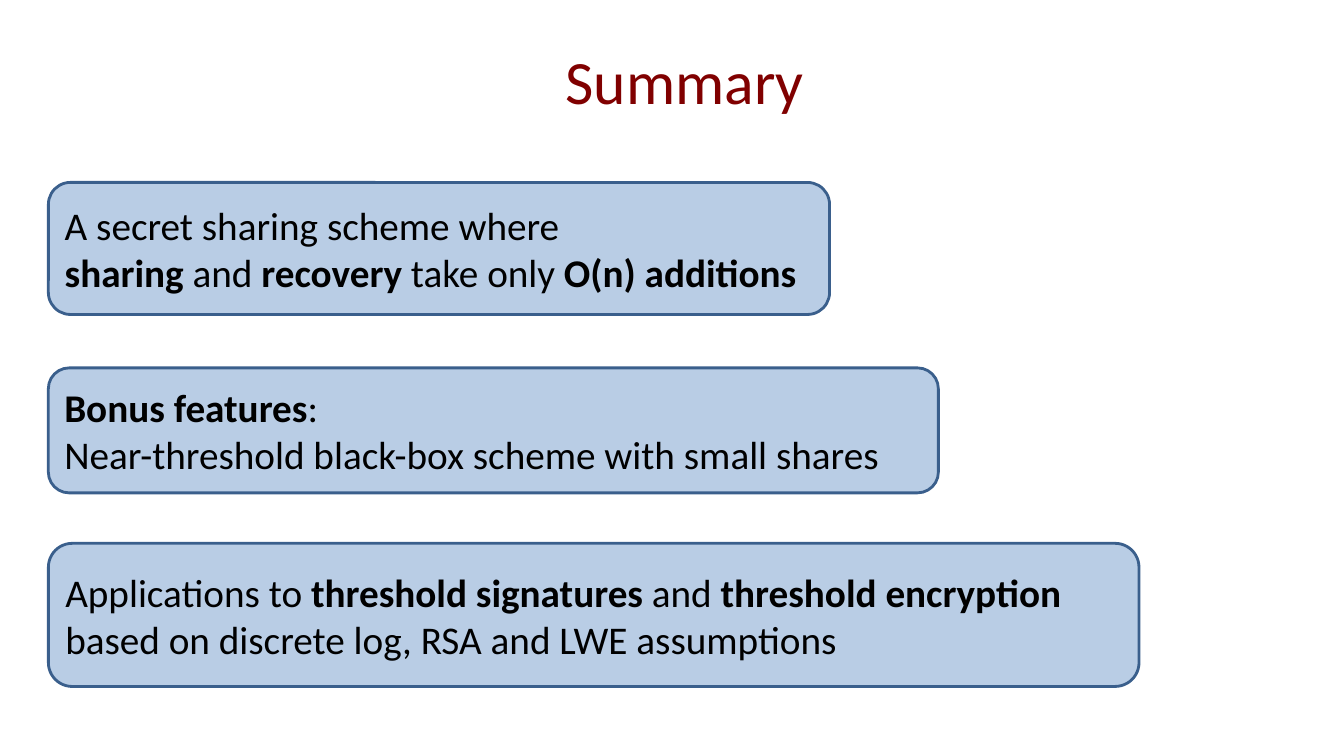
from pptx import Presentation
from pptx.dml.color import RGBColor
from pptx.enum.shapes import MSO_SHAPE
from pptx.enum.text import MSO_ANCHOR, PP_ALIGN
from pptx.util import Pt

MAROON = RGBColor(0x80, 0x00, 0x00)
BLACK = RGBColor(0x00, 0x00, 0x00)
PALE_BLUE = RGBColor(0xB9, 0xCD, 0xE5)
STEEL_BLUE = RGBColor(0x3A, 0x5F, 0x8C)

BOX_LEFT = 34.56

# Top, width, height and lines of each box; ** switches bold on and off
BOXES = [
    (130.32, 558, 94.32, [
        "A secret sharing scheme where",
        "**sharing** and **recovery** take only **O(n) additions**",
    ]),
    (262.8, 635.76, 89.28, [
        "**Bonus features**:",
        "Near-threshold black-box scheme with small shares",
    ]),
    (388.08, 779.04, 102.24, [
        "Applications to** threshold signatures **and **threshold encryption**",
        "based on discrete log, RSA and LWE assumptions",
    ]),
]


def write_text(frame, lines, size, color, font="Calibri", align=PP_ALIGN.LEFT):
    """Fill a text frame with one paragraph per line."""
    frame.word_wrap = True
    frame.vertical_anchor = MSO_ANCHOR.MIDDLE
    for index, line in enumerate(lines):
        para = frame.paragraphs[0] if index == 0 else frame.add_paragraph()
        para.alignment = align
        for part, text in enumerate(line.split("**")):
            if not text:
                continue
            span = para.add_run()
            span.text = text
            span.font.name = font
            span.font.size = Pt(size)
            span.font.bold = part % 2 == 1
            span.font.color.rgb = color


class SummaryPage:
    """Holds the box style and the current slide."""

    def __init__(self, deck):
        self.fill = PALE_BLUE
        self.border = STEEL_BLUE
        self.page = deck.slides.add_slide(deck.slide_layouts[5])

    def title(self, text, left, top, width, height):
        title = self.page.shapes.title
        title.left, title.top = Pt(left), Pt(top)
        title.width, title.height = Pt(width), Pt(height)
        write_text(title.text_frame, [text], size=44, color=MAROON,
                   align=PP_ALIGN.CENTER)

    def box(self, lines, left, top, width, height):
        box = self.page.shapes.add_shape(
            MSO_SHAPE.ROUNDED_RECTANGLE,
            Pt(left), Pt(top), Pt(width), Pt(height))
        box.shadow.inherit = False
        box.fill.solid()
        box.fill.fore_color.rgb = self.fill
        box.line.color.rgb = self.border
        box.line.width = Pt(2)
        write_text(box.text_frame, lines, size=28, color=BLACK)


def main():
    deck = Presentation()
    deck.slide_width, deck.slide_height = Pt(960), Pt(540)
    summary = SummaryPage(deck)

    # Heading
    summary.title("Summary", 156.24, 12.24, 666, 90)

    # Result boxes
    for top, width, height, lines in BOXES:
        summary.box(lines, BOX_LEFT, top, width, height)

    deck.save("out.pptx")


if __name__ == "__main__":
    main()
